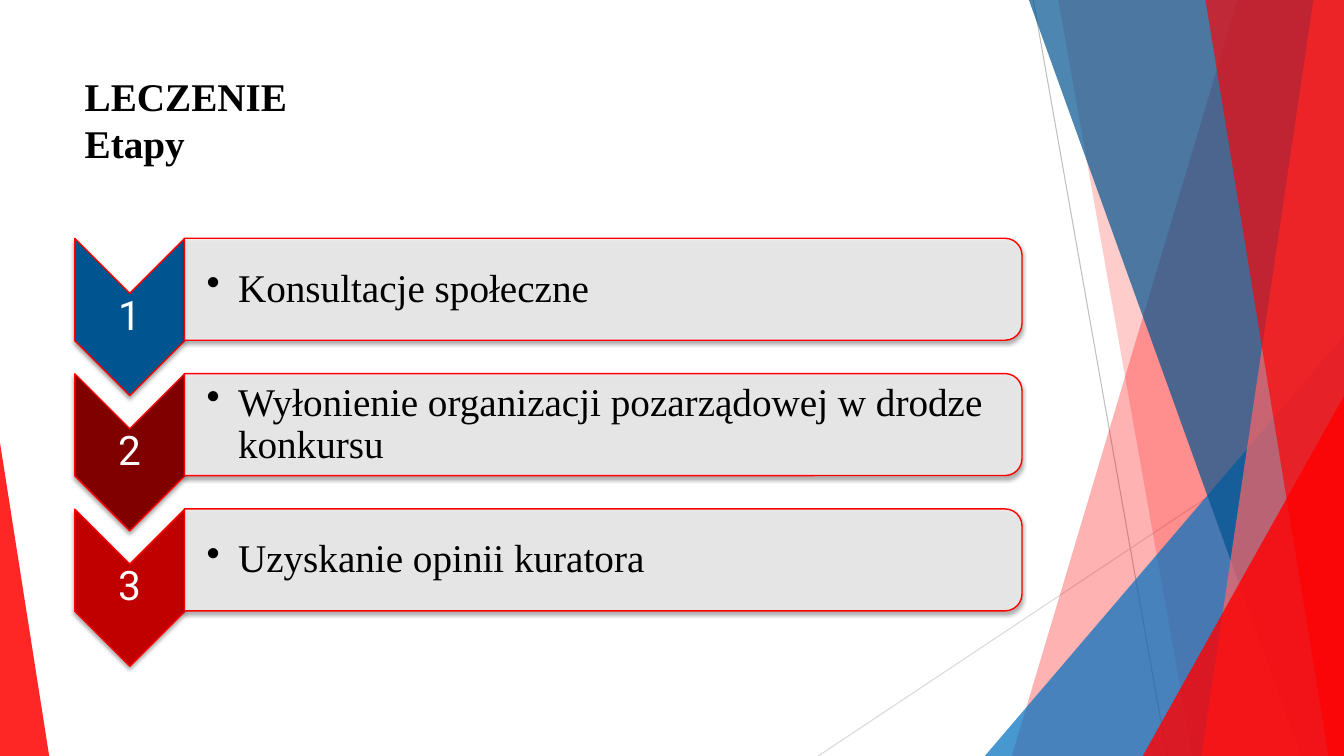
from lxml import etree
from pptx import Presentation
from pptx import util as u
from pptx.dml.color import RGBColor
from pptx.enum import shapes, text
from pptx.oxml.ns import qn

Cm, Pt = u.Cm, u.Pt
COLOURS = {
    "red": "FF0000", "coral": "FF6666", "blue": "0070C0", "navy": "005490",
    "maroon": "800000", "crimson": "C00000", "bar": "EBEBEB",
    "grey": "BFBFBF", "pale": "D9D9D9", "black": "000000", "white": "FFFFFF",
}
WIDTH, HEIGHT = 33.87, 19.05


def paint(shape, colour, opacity=100, outlined=False):
    """Fill a shape; an outlined one also gets a red line and a soft shadow."""
    shape.shadow.inherit = False
    shape.fill.solid()
    shape.fill.fore_color.rgb = RGBColor.from_string(COLOURS[colour])
    if opacity < 100:
        tint = shape.fill._xPr.find(qn("a:solidFill"))[0]
        etree.SubElement(tint, qn("a:alpha"), val=str(opacity * 1000))
    if not outlined:
        shape.line.fill.background()
        return
    shape.line.color.rgb = RGBColor.from_string(COLOURS["red"])
    shape.line.width = Pt(1)
    effects = shape._element.spPr.find(qn("a:effectLst"))
    shadow = etree.SubElement(effects, qn("a:outerShdw"), blurRad=str(Pt(3)),
                              dist=str(Pt(2)), dir="5400000", rotWithShape="0")
    tint = etree.SubElement(shadow, qn("a:srgbClr"), val=COLOURS["black"])
    etree.SubElement(tint, qn("a:alpha"), val="35000")


def write(para, words, size, font, colour):
    span = para.add_run()
    span.text = words
    span.font.size = Pt(size)
    span.font.name = font
    span.font.color.rgb = RGBColor.from_string(COLOURS[colour])
    return span


deck = Presentation()
deck.slide_width, deck.slide_height = Cm(WIDTH), Cm(HEIGHT)
page = deck.slides.add_slide(deck.slide_layouts[5])

# Thin lines behind the ribbons
for x1, y1, x2, y2, colour in [(26.04, 0, 29.41, HEIGHT, "grey"),
                               (WIDTH, 10.24, 20.62, HEIGHT, "pale")]:
    line = page.shapes.add_connector(shapes.MSO_CONNECTOR.STRAIGHT,
                                     Cm(x1), Cm(y1), Cm(x2), Cm(y2))
    line.line.color.rgb = RGBColor.from_string(COLOURS[colour])
    line.line.width = Pt(0.75)
    etree.SubElement(line._element.spPr, qn("a:effectLst"))

# Ribbons reach the right edge: top x, bottom x.
# Triangles stand on the bottom edge: left, width, height, apex.
ribbons = [
    ((31.19, 25.5), "red", 30),
    ((26.67, 30.05), "red", 20),
    ((24.82, 9.05, 10.59, 1), "blue", 72),
    ((25.93, 32.79), "navy", 70),
    ((33.1, 30.28), "coral", 70),
    ((30.38, 33.48), "red", 65),
    ((28.8, 5.07, 9.07, 1), "red", 80),
    ((0, 1.24, 7.9, 0), "red", 85),
]
for place, colour, opacity in ribbons:
    if len(place) == 2:
        top_x, bottom_x = place
        outline = page.shapes.build_freeform(Cm(top_x), 0)
        outline.add_line_segments([(Cm(WIDTH), 0), (Cm(WIDTH), Cm(HEIGHT)),
                                   (Cm(bottom_x), Cm(HEIGHT))])
        ribbon = outline.convert_to_shape()
    else:
        left, width, height, apex = place
        ribbon = page.shapes.add_shape(
            shapes.MSO_SHAPE.ISOSCELES_TRIANGLE,
            Cm(left), Cm(HEIGHT - height), Cm(width), Cm(height))
        ribbon.adjustments[0] = apex
    paint(ribbon, colour, opacity)

# Title
title = page.shapes.title
title.left, title.top, title.width, title.height = Cm(1.88), Cm(1.7), Cm(23.88), Cm(3.66)
title.text_frame.vertical_anchor = text.MSO_ANCHOR.TOP
para = title.text_frame.paragraphs[0]
para.alignment = text.PP_ALIGN.LEFT
write(para, "LECZENIE", 28, "Times New Roman", "black").font.bold = True
para.add_line_break()
write(para, "Etapy", 28, "Times New Roman", "black").font.bold = True

# Numbered stages
stages = [
    ("Konsultacje społeczne", "navy"),
    ("Wyłonienie organizacji pozarządowej w drodze konkursu", "maroon"),
    ("Uzyskanie opinii kuratora", "crimson"),
]
for row, (stage, colour) in enumerate(stages):
    top = 6.01 + 3.41 * row

    # Both presets are turned a quarter: centre x, centre y, length, breadth
    for preset, x, y, length, breadth, fill, opacity in [
            (shapes.MSO_SHAPE.CHEVRON, 3.27, top + 1.98, 3.96, 2.77, colour, 100),
            (shapes.MSO_SHAPE.ROUND_2_SAME_RECTANGLE, 15.2, top + 1.28,
             2.57, 21.11, "bar", 90)]:
        shape = page.shapes.add_shape(preset, Cm(x - length / 2), Cm(y - breadth / 2),
                                      Cm(length), Cm(breadth))
        shape.rotation = 90
        paint(shape, fill, opacity, outlined=True)

    for words, left, drop, width, height, inset, size, font, ink in [
            (str(row + 1), 1.88, 1.38, 2.77, 1.19, 0.05, 29, "Roboto", "white"),
            (stage, 4.65, 0.13, 20.98, 2.31, 0.56, 28, "Times New Roman", "black")]:
        box = page.shapes.add_textbox(Cm(left), Cm(top + drop), Cm(width), Cm(height))
        frame = box.text_frame
        frame.word_wrap = True
        frame.vertical_anchor = text.MSO_ANCHOR.MIDDLE
        frame.margin_left = Cm(inset)
        frame.margin_right = frame.margin_top = frame.margin_bottom = Cm(0.05)
        para = frame.paragraphs[0]
        para.line_spacing = 0.9
        write(para, words, size, font, ink)
        if words == stage:
            props = para._p.get_or_add_pPr()
            props.set("marL", str(Cm(0.79)))
            props.set("indent", str(-Cm(0.79)))
            etree.SubElement(props, qn("a:buChar"), char="•")
        else:
            para.alignment = text.PP_ALIGN.CENTER

deck.save("out.pptx")
